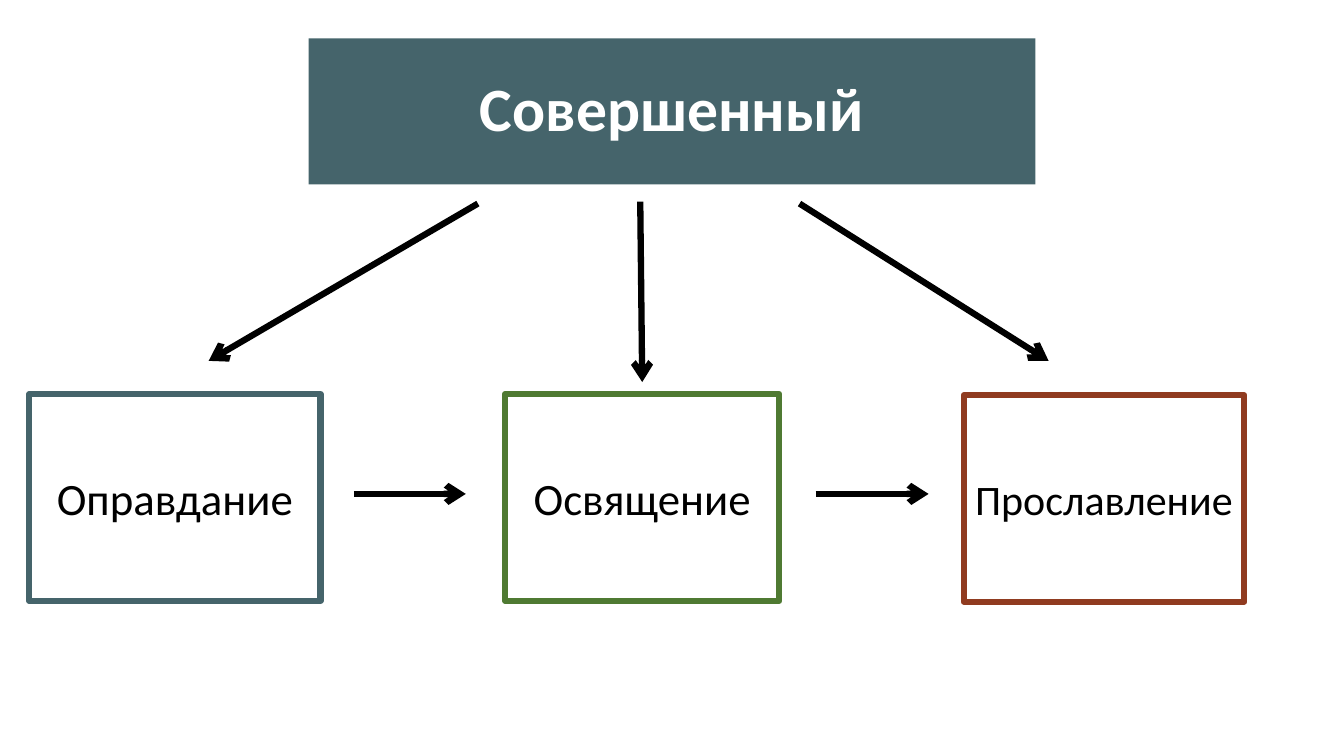
"""Build a slide with one heading box and three linked stages below it."""
from lxml import etree
from pptx import Presentation
from pptx.dml.color import RGBColor
from pptx.enum.shapes import MSO_CONNECTOR, MSO_SHAPE
from pptx.enum.text import MSO_ANCHOR, PP_ALIGN
from pptx.oxml.ns import qn
from pptx.util import Inches, Pt

RECT = MSO_SHAPE.RECTANGLE
LINE = MSO_CONNECTOR.STRAIGHT
MIDDLE = MSO_ANCHOR.MIDDLE
CENTER = PP_ALIGN.CENTER
SLATE, GREEN, RUST = "45646B", "4F7A32", "903B20"
BLACK, WHITE = "000000", "FFFFFF"


def paint(fmt, color):
    fmt.solid()
    fmt.fore_color.rgb = RGBColor.from_string(color)


def add_box(text, place, fill=WHITE, edge=None, size=32, color=BLACK,
            bold=False, spacing=1.0):
    box = slide.shapes.add_shape(RECT, *map(Inches, place))
    box.shadow.inherit = False
    paint(box.fill, fill)
    if edge:
        paint(box.line.fill, edge)
        box.line.width = Pt(4.5)
    else:
        box.line.fill.background()
    frame = box.text_frame
    frame.word_wrap = True
    frame.vertical_anchor = MIDDLE
    para = frame.paragraphs[0]
    para.alignment = CENTER
    para.line_spacing = spacing
    run = para.add_run()
    run.text = text
    run.font.name = "Calibri"
    run.font.size = Pt(size)
    run.font.bold = bold
    paint(run.font.fill, color)


deck = Presentation()
deck.slide_width = Inches(13.33)
deck.slide_height = Inches(7.5)
slide = deck.slides.add_slide(deck.slide_layouts[6])

add_box("Совершенный", (3.06, 0.38, 7.21, 1.45), fill=SLATE, size=44,
        color=WHITE, bold=True, spacing=0.9)

stages = [
    ("Оправдание", 0.29, 3.91, 2.89, SLATE, 32),
    ("Освящение", 5.01, 3.91, 2.72, GREEN, 32),
    ("Прославление", 9.56, 3.92, 2.78, RUST, 30),
]
for text, left, top, width, edge, size in stages:
    add_box(text, (left, top, width, 2.05), edge=edge, size=size)

arrows = [
    (3.51, 4.9, 4.62, 4.9),
    (8.09, 4.9, 9.21, 4.9),
    (7.93, 2.02, 10.4, 3.58),
    (6.35, 2, 6.37, 3.79),
    (4.74, 2.02, 2.07, 3.58),
]
for ends in arrows:
    arrow = slide.shapes.add_connector(LINE, *map(Inches, ends))
    paint(arrow.line.fill, BLACK)
    arrow.line.width = Pt(4.5)
    stroke = arrow.line._get_or_add_ln()
    etree.SubElement(stroke, qn("a:tailEnd"), type="arrow")
    etree.SubElement(stroke.getparent(), qn("a:effectLst"))

deck.save("out.pptx")
